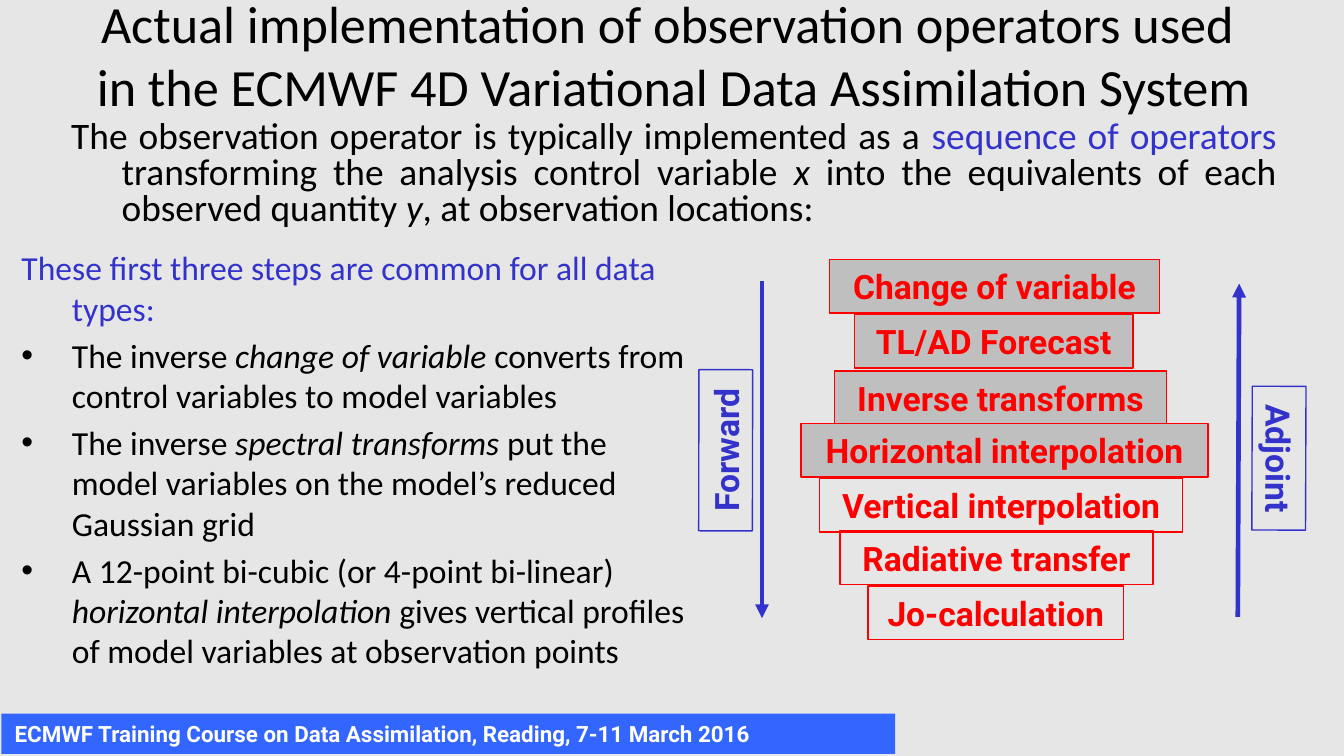
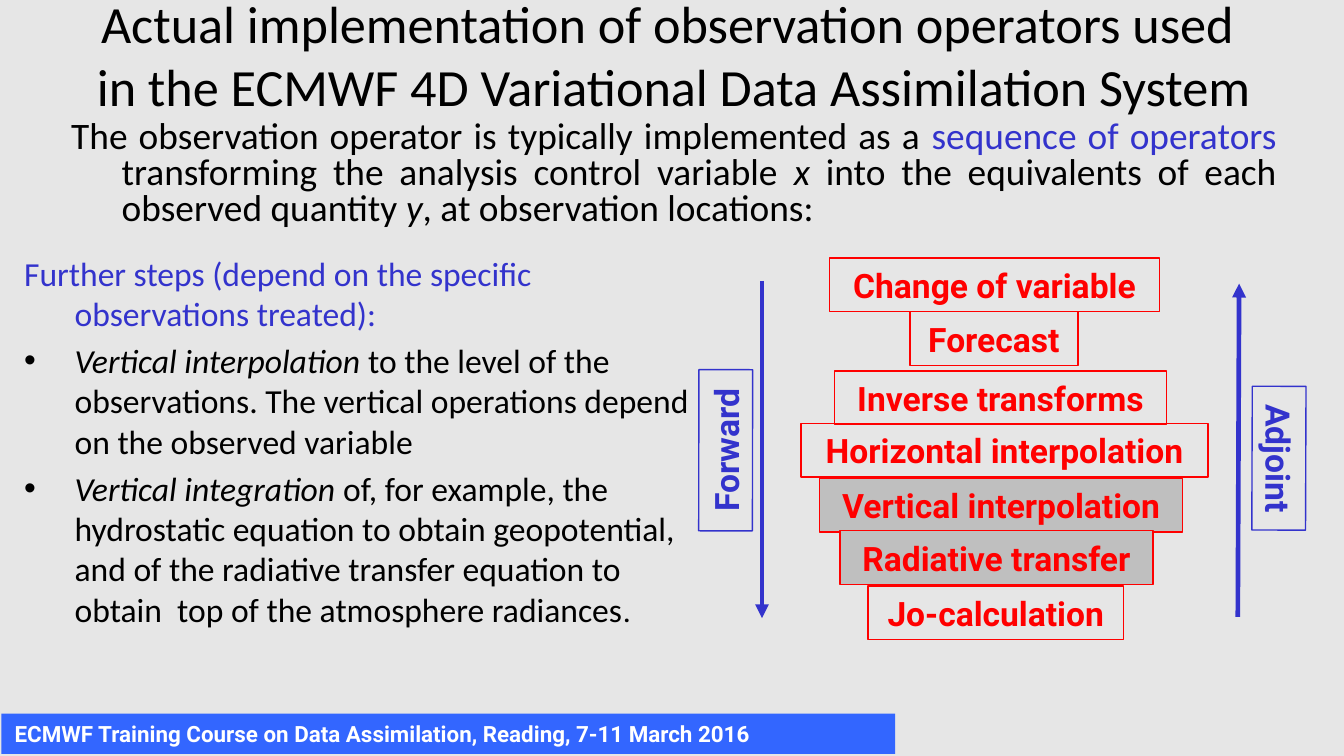
from dataclasses import dataclass
from typing import NamedTuple

from lxml import etree
from pptx import Presentation
from pptx import util as u
from pptx.dml.color import RGBColor
from pptx.enum import shapes, text
from pptx.oxml import ns


@dataclass(frozen=True)
class Theme:
    """Colours, fonts and type sizes (points) of both slides."""
    back: str = "E6E6E6"
    band: str = "3366FF"
    white: str = "FFFFFF"
    black: str = "000000"
    blue: str = "3333CC"
    red: str = "FF0000"
    grey: str = "BFBFBF"
    sans: str = "Calibri"
    bold: str = "Roboto"
    title: int = 28
    lead: int = 20
    main: int = 18
    foot: int = 12
    thin: float = 0.75
    thick: float = 2.5


T = Theme()


class Area(NamedTuple):
    left: float
    top: float
    width: float
    height: float


class Bit(NamedTuple):
    """A stretch of text that may differ from its paragraph."""
    text: str
    slant: bool = False
    color: str = ""
    font: str = ""


class Step(NamedTuple):
    label: str
    left: float
    top: float
    width: float


class Label(NamedTuple):
    text: str
    area: Area
    turn: float


class Arrow(NamedTuple):
    x1: float
    y1: float
    x2: float
    y2: float


class Page(NamedTuple):
    area: Area
    head: str
    items: list[list[Bit]]
    steps: list[Step]
    lit: range


# Shared content
TITLE = ("Actual implementation of observation operators used ",
         "in the ECMWF 4D Variational Data Assimilation System")
FOOT = "ECMWF Training Course on Data Assimilation, Reading, 7-11 March 2016"
LEAD = [
    Bit("The observation operator is typically implemented as a "),
    Bit("sequence of operators", color=T.blue),
    Bit(" transforming the analysis control variable "),
    Bit("x", True),
    Bit(" into the equivalents of each observed quantity "),
    Bit("y", True),
    Bit(", at observation locations:"),
]
TALL = 0.4  # height of every step and label
STEPS = [
    Step("Inverse transforms", 6.21, 2.76, 2.47),
    Step("Horizontal interpolation", 5.96, 3.15, 3.03),
    Step("Vertical interpolation", 6.1, 3.56, 2.7),
    Step("Radiative transfer", 6.25, 3.95, 2.33),
    Step("Jo-calculation", 6.46, 4.36, 1.9),
]
LABELS = [
    Label("Forward", Area(4.8, 3.15, 1.2, TALL), 270.1),
    Label("Adjoint", Area(8.98, 3.21, 1.07, TALL), 90.2),
]
ARROWS = [Arrow(5.67, 2.09, 5.67, 4.6), Arrow(9.21, 4.59, 9.22, 2.11)]

# What differs from slide to slide
PAGES = [
    Page(
        Area(0.06, 1.79, 5.22, 3.6),
        "These first three steps are common for all data types:",
        [
            [Bit("The inverse "), Bit("change of variable", True),
             Bit(" converts from control variables to model variables")],
            [Bit("The inverse "), Bit("spectral transforms", True),
             Bit(" put the model variables on the model’s reduced Gaussian grid")],
            [Bit("A 12-point bi-cubic (or 4-point bi-linear) "),
             Bit("horizontal interpolation", True),
             Bit(" gives vertical profiles of model variables at observation points")],
        ],
        [Step("Change of variable", 6.17, 1.93, 2.46),
         Step("TL/AD Forecast", 6.36, 2.34, 2.07), *STEPS],
        range(0, 4),
    ),
    Page(
        Area(0.08, 1.83, 5.22, 3.6),
        "Further steps (depend on the specific observations treated):",
        [
            [Bit("Vertical interpolation", True),
             Bit(" to the level of the observations. The vertical operations"
                 " depend on the observed variable")],
            [Bit("Vertical integration", True),
             Bit(" of, for example, the hydrostatic equation to obtain"
                 " geopotential, and of the radiative transfer equation to"
                 " obtain  top of the atmosphere radiances"),
             Bit(".", font=T.bold)],
        ],
        [Step("Change of variable", 6.17, 1.92, 2.46),
         Step("Forecast", 6.77, 2.32, 1.25), *STEPS],
        range(4, 6),
    ),
]


def rgb(code: str) -> RGBColor:
    return RGBColor.from_string(code)


def style(para, size: int, color: str, font: str, bold: bool = False) -> None:
    face = para.font
    face.size, face.name, face.bold = u.Pt(size), font, bold
    face.color.rgb = rgb(color)


def write(para, bits: list[Bit]) -> None:
    for bit in bits:
        run = para.add_run()
        run.text = bit.text
        if bit.slant:
            run.font.italic = True
        if bit.color:
            run.font.color.rgb = rgb(bit.color)
        if bit.font:
            run.font.name = bit.font


def plain(para) -> None:
    """Drop the bullet that the template gives, keeping the indent."""
    props = para._p.get_or_add_pPr()
    props.insert_element_before(
        etree.SubElement(props, ns.qn("a:buNone")),
        "a:tabLst", "a:defRPr", "a:extLst")


def place(holder, area: Area):
    """Move a placeholder and return its text frame."""
    holder.left, holder.top, holder.width, holder.height = map(u.Inches, area)
    frame = holder.text_frame
    frame.auto_size = text.MSO_AUTO_SIZE.NONE
    frame.word_wrap = True
    return frame


def box(slide, area: Area, words: str, size: int, color: str,
        fill: str = "", line: str = ""):
    """Draw a rectangle holding one line of bold text."""
    shape = slide.shapes.add_shape(
        shapes.MSO_SHAPE.RECTANGLE, *map(u.Inches, area))
    shape.shadow.inherit = False
    if fill:
        shape.fill.solid()
        shape.fill.fore_color.rgb = rgb(fill)
    else:
        shape.fill.background()
    if line:
        shape.line.color.rgb = rgb(line)
        shape.line.width = u.Pt(T.thin)
    else:
        shape.line.fill.background()
    frame = shape.text_frame
    frame.word_wrap = False
    frame.vertical_anchor = text.MSO_ANCHOR.MIDDLE
    para = frame.paragraphs[0]
    para.text = words
    para.alignment = text.PP_ALIGN.CENTER
    style(para, size, color, T.bold, True)
    return shape


def point(slide, arrow: Arrow) -> None:
    line = slide.shapes.add_connector(
        shapes.MSO_CONNECTOR.STRAIGHT, *map(u.Inches, arrow))
    line.line.color.rgb = rgb(T.blue)
    line.line.width = u.Pt(T.thick)
    etree.SubElement(line.line._get_or_add_ln(), ns.qn("a:tailEnd"),
                     type="triangle")
    etree.SubElement(line._element.spPr, ns.qn("a:effectLst"))


def frame_up(slide) -> None:
    """Add the title, the lead text and the footer band."""
    frame = place(slide.shapes.title, Area(0.2, 0.15, 9.62, 0.5))
    frame.vertical_anchor = text.MSO_ANCHOR.MIDDLE
    para = frame.paragraphs[0]
    write(para, [Bit(TITLE[0])])
    para.add_line_break()
    write(para, [Bit(TITLE[1])])
    para.alignment = text.PP_ALIGN.CENTER
    style(para, T.title, T.black, T.sans)

    para = place(slide.placeholders[1], Area(0.43, 0.85, 9.17, 0.85)).paragraphs[0]
    write(para, LEAD)
    para.alignment = text.PP_ALIGN.JUSTIFY
    para.line_spacing = 0.8
    style(para, T.lead, T.black, T.sans)
    plain(para)

    band = box(slide, Area(0.01, 5.31, 6.65, 0.3), FOOT, T.foot, T.white, T.band)
    band.text_frame.paragraphs[0].alignment = text.PP_ALIGN.LEFT


def build(deck, page: Page) -> None:
    slide = deck.slides.add_slide(deck.slide_layouts.get_by_name("Two Content"))
    frame_up(slide)

    # Heading and bullet list
    frame = place(slide.placeholders[2], page.area)
    head = frame.paragraphs[0]
    write(head, [Bit(page.head)])
    style(head, T.main, T.blue, T.sans)
    plain(head)
    for item in page.items:
        para = frame.add_paragraph()
        write(para, item)
        style(para, T.main, T.black, T.sans)

    # Chain of operators, with the current ones shaded
    for rank, step in enumerate(page.steps):
        box(slide, Area(step.left, step.top, step.width, TALL), step.label,
            T.main, T.red, T.grey if rank in page.lit else "", T.red)

    # Directions
    for arrow in ARROWS:
        point(slide, arrow)
    for label in LABELS:
        shape = box(slide, label.area, label.text, T.main, T.blue, line=T.blue)
        shape.rotation = label.turn


def main() -> None:
    deck = Presentation()
    # Widescreen, 16 to 9
    deck.slide_width = u.Inches(10)
    deck.slide_height = u.Inches(10 * 9 / 16)
    fill = deck.slide_master.background.fill
    fill.solid()
    fill.fore_color.rgb = rgb(T.back)
    for page in PAGES:
        build(deck, page)
    deck.save("out.pptx")


if __name__ == "__main__":
    main()
